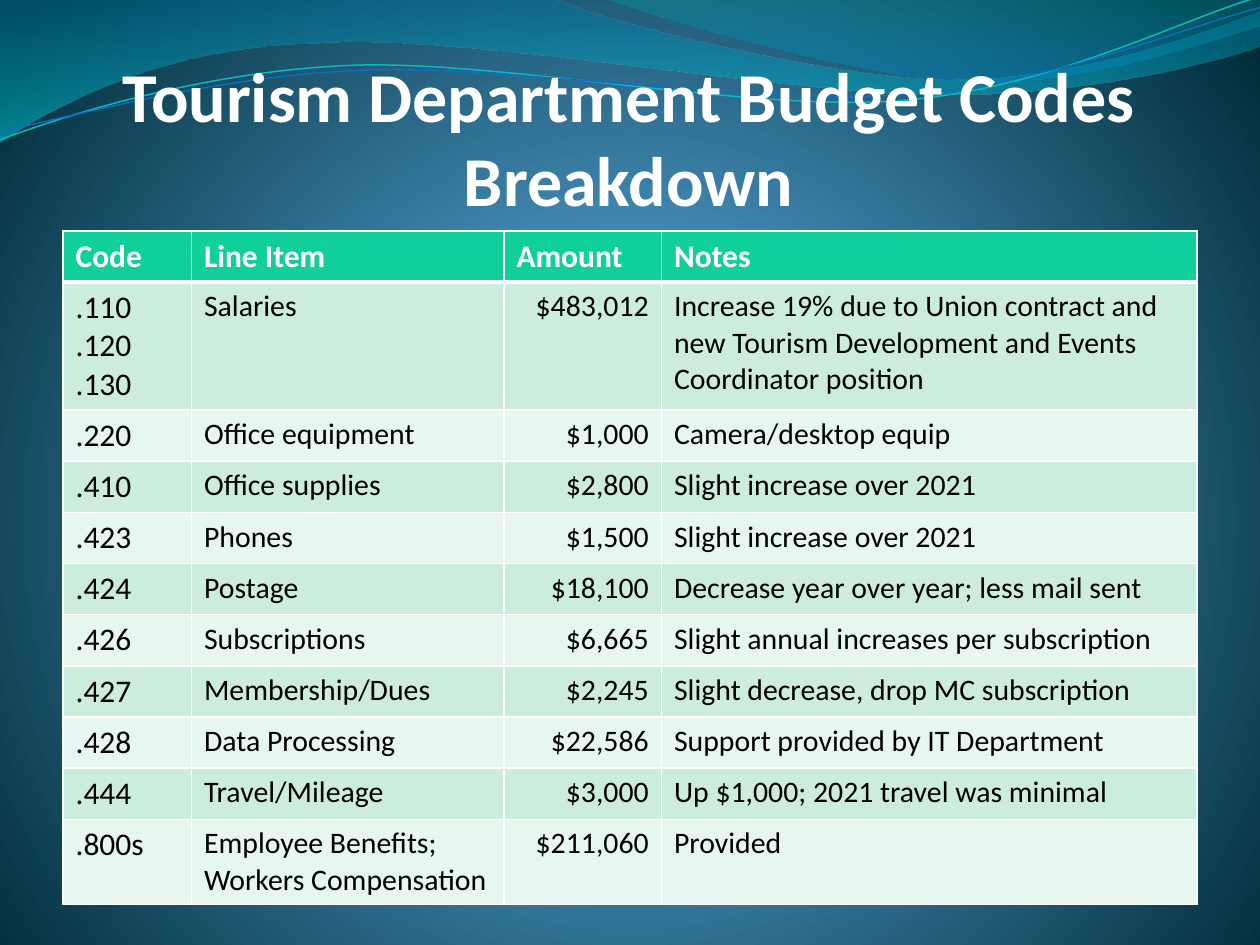
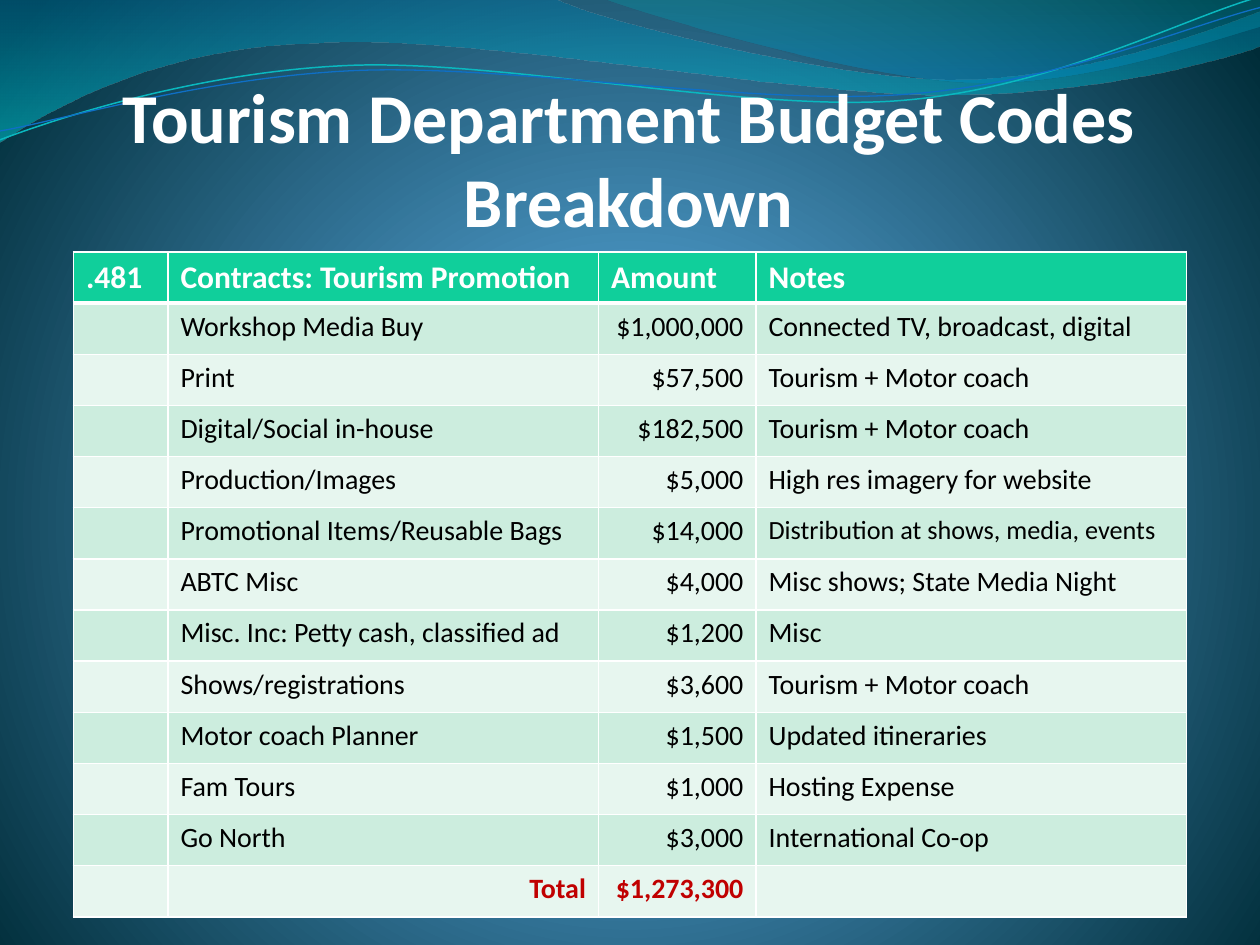
import lxml.etree
import pptx
import pptx.dml.color
import pptx.enum.text
import pptx.oxml.ns
import pptx.util

qn = pptx.oxml.ns.qn
SubElement = lxml.etree.SubElement
RGB = pptx.dml.color.RGBColor.from_string
ALIGN = pptx.enum.text.PP_ALIGN

FONT = "Calibri"
COLORS = {
    "white": "FFFFFF", "black": "000000", "total": "C00000",
    "header": "10CF9B", "odd": "CCEDDE", "even": "E7F6EF",
    "sky": "4AA0D6", "mid": "4C98C7", "deep": "002C38",
    "wave_blue": "0074A1", "wave_teal": "00C6CF",
    "crest_teal": "00A1A9", "crest_blue": "008BBF",
    "line_teal": "0AB8BF", "line_blue": "0F6FC6",
}

prs = pptx.Presentation()
prs.slide_width = pptx.util.Inches(10)
prs.slide_height = pptx.util.Inches(7.5)
U = prs.slide_width // 100  # the slide is a grid of 100 columns by 75 rows
ROW_HEIGHT = 4.06


def put_text(tf, text, size=18, color="black", bold=False, align=ALIGN.LEFT):
    """Write one paragraph for each line of text, all in one format."""
    for i, line in enumerate(text.split("\n")):
        p = tf.paragraphs[0] if i == 0 else tf.add_paragraph()
        p.alignment = align
        r = p.add_run()
        r.text = line
        r.font.name = FONT
        r.font.size = pptx.util.Pt(size)
        r.font.bold = bold
        r.font.color.rgb = RGB(COLORS[color])


def set_gradient(fill, element, stops, center=None):
    """Fill with (percent, color, opacity) stops, downwards or around a center."""
    fill.gradient()
    grad = element.find(".//" + qn("a:gradFill"))
    for child in list(grad):
        grad.remove(child)
    gs_list = SubElement(grad, qn("a:gsLst"))
    for pos, color, opacity in stops:
        gs = SubElement(gs_list, qn("a:gs"), pos=str(pos * 1000))
        clr = SubElement(gs, qn("a:srgbClr"), val=COLORS[color])
        if opacity < 100:
            SubElement(clr, qn("a:alpha"), val=str(opacity * 1000))
    if center:
        around = SubElement(grad, qn("a:path"), path="circle")
        SubElement(around, qn("a:fillToRect"),
                   {side: str(v * 1000) for side, v in zip("ltrb", center)})
    else:
        SubElement(grad, qn("a:lin"), ang=str(90 * 60000), scaled="1")


# Each segment is one end point, or two control points and an end point
waves = [
    {"start": (0, 0),
     "segments": [
         [(44, -0.1)],
         [(47.6, 1.7), (66.4, 6.3), (75.8, 6.3)],
         [(85.3, 6.3), (95.8, 2.6), (100, 0.9)],
         [(100.1, 3.6)],
         [(98.3, 4.4), (87, 7.6), (74.6, 7.5)],
         [(62.2, 7.5), (38.2, 2.8), (25.7, 3.4)],
         [(12.9, 3.6), (4.6, 8.3), (-0.1, 11.3)],
         [(0, 0)]],
     "stops": [(0, "wave_blue", 45), (100, "wave_teal", 55)]},
    {"start": (47.9, -0.1),
     "segments": [
         [(50.9, 1.1), (68.2, 6.2), (76.9, 6.5)],
         [(85.6, 6.9), (96.1, 3.2), (100, 2.1)],
         [(100, 0)],
         [(47.9, -0.1)]],
     "stops": [(0, "crest_teal", 30), (80, "crest_blue", 45)]},
    {"start": (0, 11.1),
     "segments": [
         [(4.8, 9.3), (15.8, 5.7), (27.7, 5.2)],
         [(39.5, 4.7), (59.3, 8.9), (71.3, 8)],
         [(83.3, 7.1), (93.8, 1.5), (99.8, -0.2)]],
     "line": ("line_teal", 0.85)},
    {"start": (0, 10.4),
     "segments": [
         [(4.7, 9.6), (16.4, 6.1), (28.3, 5.6)],
         [(40.3, 5.1), (59.7, 8.4), (71.7, 7.5)],
         [(83.6, 6.7), (94.1, 2.1), (100, 0.6)]],
     "line": ("line_blue", 0.75)},
]

slides = [
    {"title_top": 3.9, "left": 5, "top": 18.33, "size": 17,
     "columns": [10.2, 24.8, 12.5, 42.5],
     "tall_rows": {1: 10.16, 10: 6.76},
     "rows": [
         ("Code", "Line Item", "Amount", "Notes"),
         (".110\n.120\n.130", "Salaries", "$483,012",
          "Increase 19% due to Union contract and new Tourism Development "
          "and Events Coordinator position"),
         (".220", "Office equipment", "$1,000", "Camera/desktop equip"),
         (".410", "Office supplies", "$2,800", "Slight increase over 2021"),
         (".423", "Phones", "$1,500", "Slight increase over 2021"),
         (".424", "Postage", "$18,100",
          "Decrease year over year; less mail sent"),
         (".426", "Subscriptions", "$6,665",
          "Slight annual increases per subscription"),
         (".427", "Membership/Dues", "$2,245",
          "Slight decrease, drop MC subscription"),
         (".428", "Data Processing", "$22,586",
          "Support provided by IT Department"),
         (".444", "Travel/Mileage", "$3,000",
          "Up $1,000; 2021 travel was minimal"),
         (".800s", "Employee Benefits; Workers Compensation", "$211,060",
          "Provided")]},
    {"title_top": 5.55, "left": 5.83, "top": 20, "size": 16,
     "columns": [7.5, 34.17, 12.5, 34.17],
     "tall_rows": {},
     "rows": [
         (".481", "Contracts: Tourism Promotion", "Amount", "Notes"),
         ("", "Workshop Media Buy", "$1,000,000",
          "Connected TV, broadcast, digital"),
         ("", "Print", "$57,500", "Tourism + Motor coach"),
         ("", "Digital/Social in-house", "$182,500", "Tourism + Motor coach"),
         ("", "Production/Images", "$5,000", "High res imagery for website"),
         ("", "Promotional Items/Reusable Bags", "$14,000",
          "Distribution at shows, media, events"),
         ("", "ABTC Misc", "$4,000", "Misc shows; State Media Night"),
         ("", "Misc. Inc: Petty cash, classified ad", "$1,200", "Misc"),
         ("", "Shows/registrations", "$3,600", "Tourism + Motor coach"),
         ("", "Motor coach Planner", "$1,500", "Updated itineraries"),
         ("", "Fam Tours", "$1,000", "Hosting Expense"),
         ("", "Go North", "$3,000", "International Co-op"),
         ("", "Total", "$1,273,300", "")]},
]

for content in slides:
    s = prs.slides.add_slide(prs.slide_layouts[6])
    set_gradient(s.background.fill, s._element,
                 [(0, "sky", 100), (25, "mid", 100), (100, "deep", 100)],
                 center=(10, 110, 10, 100))

    for wave in waves:
        points = [wave["start"]] + sum(wave["segments"], [])
        points = [(round(x * U), round(y * U)) for x, y in points]
        builder = s.shapes.build_freeform(*points[0])
        builder.add_line_segments(points[1:], close="stops" in wave)
        sp = builder.convert_to_shape()
        sp.shadow.inherit = False

        # Join the three points of each curved segment into one Bézier curve
        lines = iter(list(sp._element.iter(qn("a:lnTo"))))
        for segment in wave["segments"]:
            parts = [next(lines) for point in segment]
            if len(parts) == 3:
                curve = lxml.etree.Element(qn("a:cubicBezTo"))
                parts[0].addprevious(curve)
                for part in parts:
                    curve.append(part[0])
                    part.getparent().remove(part)

        if "stops" in wave:
            set_gradient(sp.fill, sp._element, wave["stops"])
            sp.line.fill.background()
        else:
            color, width = wave["line"]
            sp.fill.background()
            sp.line.color.rgb = RGB(COLORS[color])
            sp.line.width = pptx.util.Pt(width)

    sp = s.shapes.add_textbox(0, round(content["title_top"] * U),
                              prs.slide_width, round(13.6 * U))
    tf = sp.text_frame
    tf.word_wrap = True
    tf.vertical_anchor = pptx.enum.text.MSO_ANCHOR.BOTTOM
    tf.margin_left = tf.margin_top = tf.margin_bottom = 0
    tf.margin_right = round(0.2 * U)
    put_text(tf, "Tourism Department Budget Codes Breakdown",
             size=40, color="white", bold=True, align=ALIGN.CENTER)

    rows, columns = content["rows"], content["columns"]
    table = s.shapes.add_table(
        len(rows), len(columns),
        round(content["left"] * U), round(content["top"] * U),
        round(sum(columns) * U), round(len(rows) * ROW_HEIGHT * U)).table
    table.horz_banding = False
    for column, width in zip(table.columns, columns):
        column.width = round(width * U)

    for i, row in enumerate(rows):
        table.rows[i].height = round(content["tall_rows"].get(i, ROW_HEIGHT) * U)
        is_total = row[1] == "Total"
        for j, text in enumerate(row):
            cell = table.cell(i, j)
            tc_pr = cell._tc.get_or_add_tcPr()
            for side in "LRTB":
                thick = (i, side) in ((0, "B"), (1, "T"))
                ln = SubElement(tc_pr, qn("a:ln" + side),
                                w=str(pptx.util.Pt(3 if thick else 1)))
                SubElement(SubElement(ln, qn("a:solidFill")),
                           qn("a:srgbClr"), val=COLORS["white"])
            band = "header" if i == 0 else "odd" if i % 2 else "even"
            cell.fill.solid()
            cell.fill.fore_color.rgb = RGB(COLORS[band])
            if not text:
                continue
            if i == 0:
                put_text(cell.text_frame, text, color="white", bold=True)
                continue
            size = 18 if j == 0 else content["size"]
            if text.startswith("Distribution"):
                size = 15
            right = j == 2 or is_total
            put_text(cell.text_frame, text, size=size, bold=is_total,
                     color="total" if is_total else "black",
                     align=ALIGN.RIGHT if right else ALIGN.LEFT)

prs.save("out.pptx")
